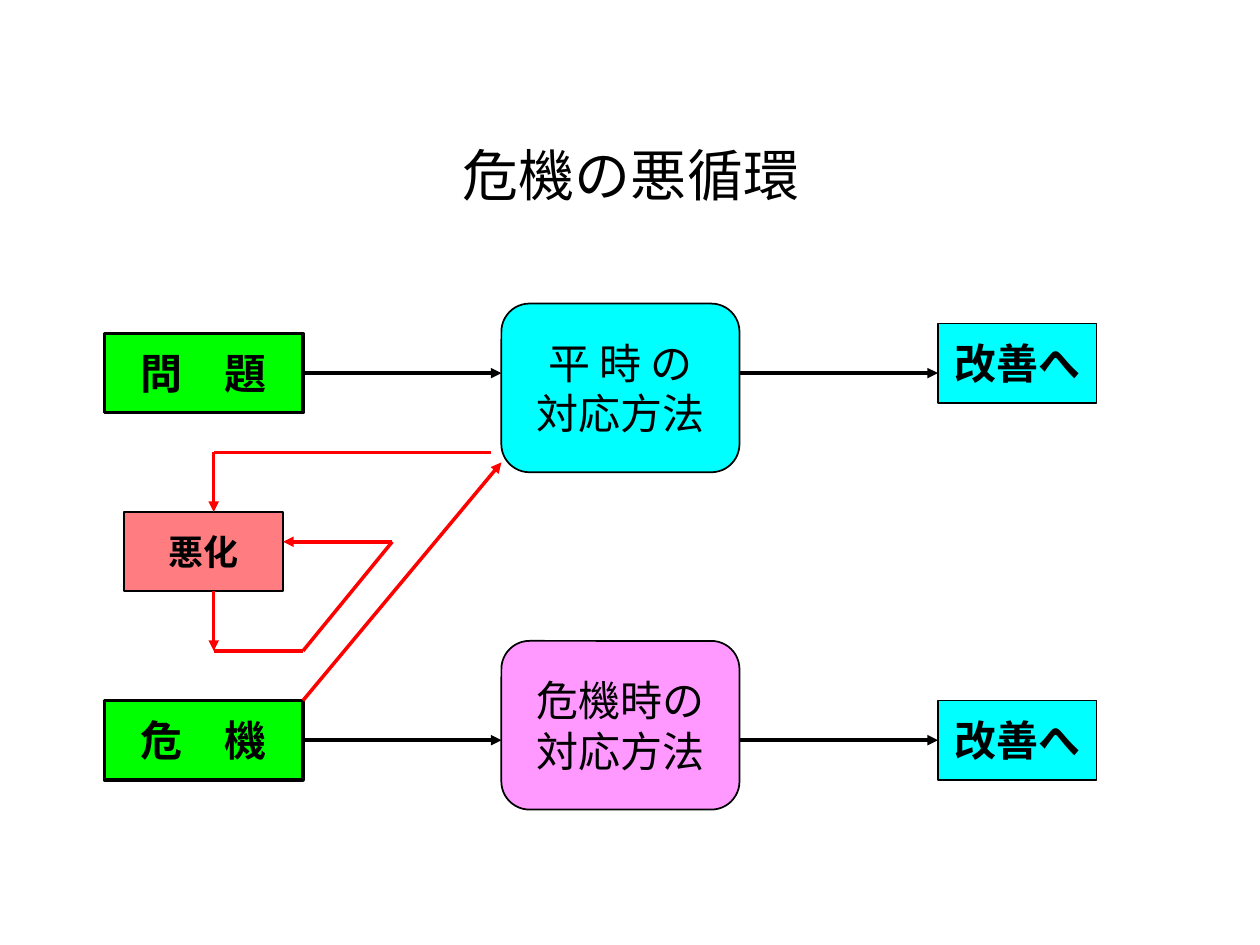
from dataclasses import dataclass
from typing import Optional

from lxml import etree
from pptx import Presentation
from pptx.dml.color import RGBColor
from pptx.enum.shapes import MSO_CONNECTOR, MSO_SHAPE
from pptx.enum.text import MSO_ANCHOR, PP_ALIGN
from pptx.oxml.ns import qn
from pptx.util import Inches, Mm, Pt

RECTANGLE = MSO_SHAPE.RECTANGLE
ROUNDED = MSO_SHAPE.ROUNDED_RECTANGLE
STRAIGHT = MSO_CONNECTOR.STRAIGHT
MIDDLE = MSO_ANCHOR.MIDDLE
CENTER = PP_ALIGN.CENTER

BLACK = RGBColor(0x00, 0x00, 0x00)
RED = RGBColor(0xFF, 0x00, 0x00)
GREEN = RGBColor(0x00, 0xFF, 0x00)
CYAN = RGBColor(0x00, 0xFF, 0xFF)
SALMON = RGBColor(0xFF, 0x7C, 0x80)
PINK = RGBColor(0xFF, 0x99, 0xFF)

FONT = "Arial"
CELL = Mm(2)
GRID_LEFT = Inches(0.83)
GRID_TOP = Inches(2.41)
LEFT_SIDE, RIGHT_SIDE = 1, 3


@dataclass(frozen=True)
class Box:
    text: str
    column: int
    row: int
    columns: int
    rows: int
    fill: RGBColor
    border: float = 1
    size: int = 24
    bold: bool = True
    preset: MSO_SHAPE = RECTANGLE


@dataclass(frozen=True)
class Arrow:
    start: tuple[int, int]
    end: tuple[int, int]
    color: RGBColor = RED
    head: bool = True
    source: Optional[str] = None
    target: Optional[str] = None


BOXES = {
    "problem": Box("問\u3000題".replace("\u3000", "　"), 0, 3, 20, 8, GREEN, border=2),
    "worsening": Box("悪化", 2, 21, 16, 8, SALMON, size=20),
    "crisis": Box("危　機", 0, 40, 20, 8, GREEN, border=2),
    "usual method": Box("平 時 の\n対応方法", 40, 0, 24, 17, CYAN, bold=False, preset=ROUNDED),
    "crisis method": Box("危機時の\n対応方法", 40, 34, 24, 17, PINK, bold=False, preset=ROUNDED),
    "usual improvement": Box("改善へ", 84, 2, 16, 8, CYAN),
    "crisis improvement": Box("改善へ", 84, 40, 16, 8, CYAN),
}

ARROWS = [
    Arrow((20, 7), (40, 7), BLACK, source="problem"),
    Arrow((20, 44), (40, 44), BLACK, source="crisis"),
    Arrow((64, 7), (84, 7), BLACK),
    Arrow((64, 44), (84, 44), BLACK, target="crisis improvement"),
    Arrow((20, 40), (40, 16)),
    Arrow((29, 24), (18, 24)),
    Arrow((39, 15), (11, 15), head=False),
    Arrow((11, 15), (11, 21)),
    Arrow((11, 29), (11, 35)),
    Arrow((11, 35), (20, 35), head=False),
    Arrow((20, 35), (29, 24), head=False),
]


def grid_point(column: int, row: int) -> tuple[int, int]:
    return GRID_LEFT + column * CELL, GRID_TOP + row * CELL


def write_text(shape, text: str, size: int, bold: bool, wrap: bool) -> None:
    frame = shape.text_frame
    frame.text = text
    frame.word_wrap = wrap
    frame.vertical_anchor = MIDDLE
    for para in frame.paragraphs:
        para.alignment = CENTER
        for span in para.runs:
            span.font.name = FONT
            span.font.size = Pt(size)
            span.font.bold = bold
            span.font.color.rgb = BLACK


def draw_box(page, box: Box):
    shape = page.shapes.add_shape(
        box.preset, *grid_point(box.column, box.row), box.columns * CELL, box.rows * CELL
    )
    shape.shadow.inherit = False
    shape.fill.solid()
    shape.fill.fore_color.rgb = box.fill
    shape.line.color.rgb = BLACK
    shape.line.width = Pt(box.border)
    write_text(shape, box.text, box.size, box.bold, wrap=False)
    return shape


def draw_arrow(page, arrow: Arrow, shapes: dict) -> None:
    connector = page.shapes.add_connector(
        STRAIGHT, *grid_point(*arrow.start), *grid_point(*arrow.end)
    )
    if arrow.source:
        connector.begin_connect(shapes[arrow.source], RIGHT_SIDE)
    if arrow.target:
        connector.end_connect(shapes[arrow.target], LEFT_SIDE)
    connector.line.color.rgb = arrow.color
    connector.line.width = Pt(2)
    properties = connector.element.spPr
    if arrow.head:
        etree.SubElement(properties.find(qn("a:ln")), qn("a:tailEnd"), type="triangle")
    etree.SubElement(properties, qn("a:effectLst"))


def main() -> None:
    """Build the slide on the vicious circle of a crisis."""
    deck = Presentation()
    deck.slide_width, deck.slide_height = Inches(10), Inches(7.5)
    page = deck.slides.add_slide(deck.slide_layouts[6])
    title = page.shapes.add_textbox(Inches(0.51), Inches(1.15), Inches(9), Inches(0.47))
    write_text(title, "危機の悪循環", 32, bold=False, wrap=True)
    shapes = {name: draw_box(page, box) for name, box in BOXES.items()}
    for arrow in ARROWS:
        draw_arrow(page, arrow, shapes)
    deck.save("out.pptx")


if __name__ == "__main__":
    main()
